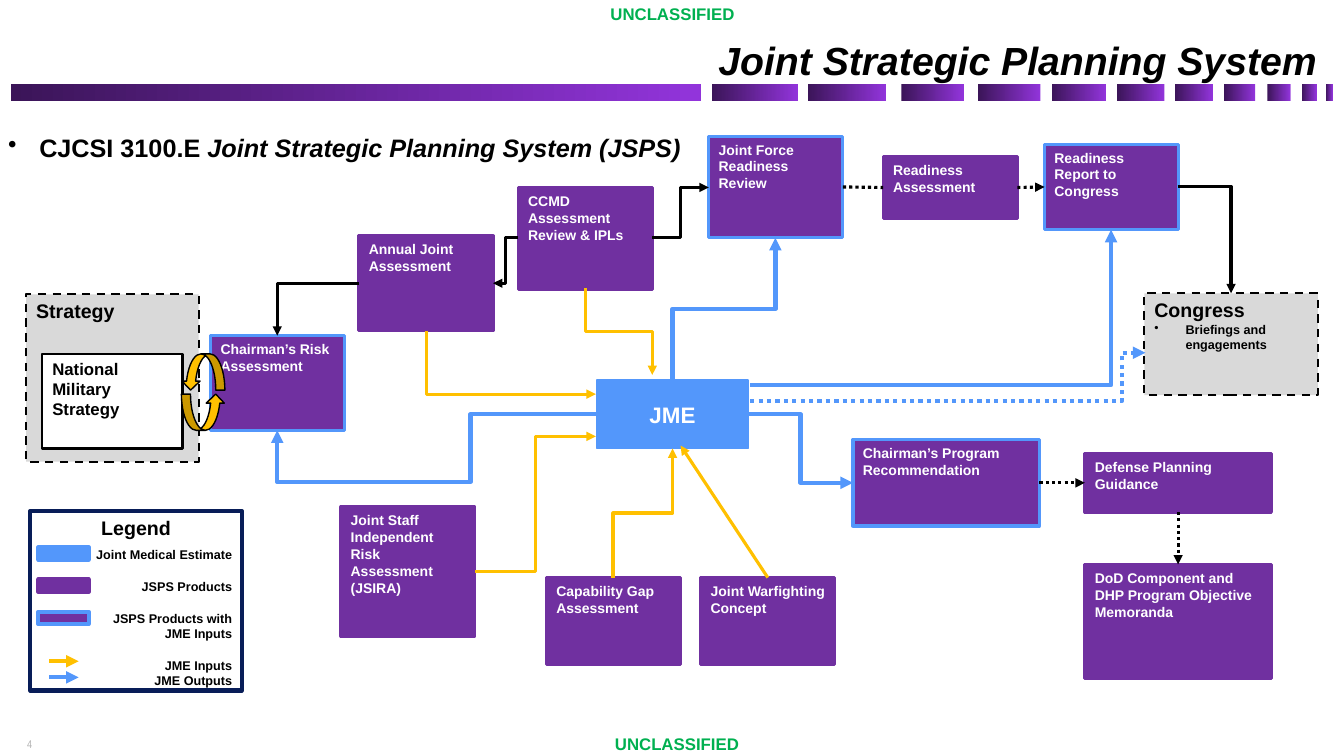
from pptx import Presentation
from pptx.dml.color import RGBColor
from pptx.enum.dml import MSO_LINE as Dash
from pptx.enum.shapes import MSO_CONNECTOR as Kind, MSO_SHAPE as Form
from pptx.enum.text import MSO_ANCHOR as Anchor, PP_ALIGN as Align
from pptx.oxml.ns import qn
from pptx.util import Inches, Pt
from lxml.etree import SubElement

rgb = RGBColor.from_string
BLACK, WHITE, GREEN, GRAY = "000000", "FFFFFF", "00B050", "D9D9D9"
PURPLE, BLUE, GOLD, NAVY = "7030A0", "5397FB", "FFC000", "081D58"

deck = Presentation()
deck.slide_width, deck.slide_height = Inches(13.33), Inches(7.5)
slide = deck.slides.add_slide(deck.slide_layouts[6])
shapes = slide.shapes


def write(shape, text, size=10, color=WHITE, bold=True, italic=False, font="Arial",
          align=Align.LEFT, anchor=Anchor.TOP, inset=None, before=0, bullet=0, more=False):
    """Write one paragraph per line of text; more=True adds to the text already there."""
    frame = shape.text_frame
    frame.word_wrap, frame.vertical_anchor = True, anchor
    if inset is not None:
        frame.margin_left = frame.margin_right = Inches(inset)
        frame.margin_top = frame.margin_bottom = Inches(inset)
    for n, line in enumerate(text.split("\n")):
        para = frame.add_paragraph() if more or n else frame.paragraphs[0]
        para.alignment = align
        if before and n == 0:
            para.space_before = Pt(before)
        if bullet:
            props = para._p.get_or_add_pPr()
            props.set("marL", str(Inches(bullet)))
            props.set("indent", str(-Inches(bullet)))
            SubElement(props, qn("a:buChar")).set("char", "•")
        para.font.size, para.font.name = Pt(size), font
        para.font.bold, para.font.color.rgb = bold, rgb(color)
        for k, part in enumerate(line.split("|")):
            run = para.add_run()
            run.text = part
            run.font.size, run.font.name = Pt(size), font
            run.font.bold, run.font.italic = bold, italic or k == 1
            run.font.color.rgb = rgb(color)


def link(start, end, color, width=2.25, dash=None, bends=0, down=False, adjust=(), head=True):
    """Draw a connector with 0 to 3 bends; down=True makes it leave vertically."""
    (x1, y1), (x2, y2) = start, end
    if down:
        cx, cy = (x1 + x2) / 2, (y1 + y2) / 2
        x1, y1, x2, y2 = cx + y1 - cy, cy - x1 + cx, cx + y2 - cy, cy - x2 + cx
    con = shapes.add_connector(Kind.ELBOW if bends else Kind.STRAIGHT,
                               Inches(x1), Inches(y1), Inches(x2), Inches(y2))
    props = con.element.spPr
    if down:
        props.find(qn("a:xfrm")).set("rot", "5400000")
    if bends:
        geom = props.find(qn("a:prstGeom"))
        geom.set("prst", f"bentConnector{bends + 1}")
        for n, value in enumerate(adjust, 1):
            guide = SubElement(geom.find(qn("a:avLst")), qn("a:gd"))
            guide.set("name", f"adj{n}")
            guide.set("fmla", f"val {round(value * 100000)}")
    con.line.color.rgb, con.line.width = rgb(color), Pt(width)
    if dash:
        con.line.dash_style = dash
    if head:
        SubElement(con.get_or_add_ln(), qn("a:tailEnd")).set("type", "triangle")
    SubElement(props, qn("a:effectLst"))
    return con


# Header band
bars = [(0.11, 6.84), (7.06, 0.86), (8.01, 0.78), (8.94, 0.62), (9.7, 0.62), (10.43, 0.54),
        (11.08, 0.47), (11.65, 0.38), (12.14, 0.31), (12.57, 0.23), (12.91, 0.15), (13.15, 0.07)]
for left, wide in bars:
    bar = shapes.add_shape(Form.RECTANGLE, Inches(left), Inches(0.83), Inches(wide), Inches(0.17))
    bar.shadow.inherit = False
    bar.line.fill.background()
    bar.fill.gradient()
    bar.fill.gradient_angle = 0
    for stop, color in zip(bar.fill.gradient_stops, ("3B1558", "9234DB")):
        stop.color.rgb = rgb(color)

# Title, markings, page number and heading
labels = [
    ((5.71, -0.01, 1.92, 0.3), "UNCLASSIFIED",
     dict(size=12, color=GREEN, align=Align.CENTER, inset=0.05)),
    ((5.96, 7.14, 1.42, 0.39), "UNCLASSIFIED",
     dict(size=12, color=GREEN, align=Align.RIGHT, anchor=Anchor.BOTTOM, inset=0.05)),
    ((0.22, 7.25, 4.44, 0.25), "4",
     dict(size=8, color="B2B2B2", bold=False, font="Arial Narrow", anchor=Anchor.BOTTOM, inset=0.05)),
    ((1.78, 0.17, 11.33, 0.71), "Joint Strategic Planning System",
     dict(size=28, color=BLACK, italic=True, align=Align.RIGHT, anchor=Anchor.BOTTOM, inset=0.05)),
    ((0.08, 1.31, 7.02, 0.4), "CJCSI 3100.E |Joint Strategic Planning System (JSPS)",
     dict(size=18, color=BLACK, inset=0, bullet=0.31)),
]
for place, text, form in labels:
    write(shapes.add_textbox(*map(Inches, place)), text, **form)

# Boxes: name, place, fill, line, line width, text, format
dark = dict(size=14, color=BLACK)
boxes = [
    ("jme", (5.92, 3.77, 1.5, 0.68), BLUE, BLUE, 1, "JME",
     dict(size=16, align=Align.CENTER, anchor=Anchor.MIDDLE)),
    ("congress", (11.35, 2.91, 1.72, 1.01), GRAY, BLACK, 1.5, "Congress", dark),
    ("strategy", (0.26, 2.92, 1.71, 1.66), GRAY, BLACK, 1.5, "Strategy", dark),
    ("nms", (0.42, 3.51, 1.39, 0.94), WHITE, BLACK, 1.5, "National\nMilitary\nStrategy",
     dict(size=12, color=BLACK)),
    ("risk", (2.09, 3.33, 1.33, 0.94), PURPLE, BLUE, 2.25, "Chairman’s Risk Assessment", {}),
    ("review", (7.03, 1.35, 1.33, 1.01), PURPLE, BLUE, 2.25, "Joint Force Readiness Review", {}),
    ("ready", (8.76, 1.55, 1.33, 0.62), PURPLE, PURPLE, 2.25, "Readiness Assessment", {}),
    ("report", (10.36, 1.43, 1.33, 0.85), PURPLE, BLUE, 2.25, "Readiness Report to Congress", {}),
    ("program", (8.46, 4.36, 1.85, 0.86), PURPLE, BLUE, 2.25, "Chairman’s Program Recommendation", {}),
    ("guide", (10.76, 4.5, 1.85, 0.58), PURPLE, PURPLE, 2.25, "Defense Planning Guidance", {}),
    ("memo", (10.76, 5.6, 1.85, 1.13), PURPLE, PURPLE, 2.25,
     "DoD Component and DHP Program Objective Memoranda", {}),
    ("concept", (6.95, 5.73, 1.33, 0.86), PURPLE, PURPLE, 2.25, "Joint Warfighting Concept", {}),
    ("gap", (5.42, 5.73, 1.33, 0.86), PURPLE, PURPLE, 2.25, "Capability Gap Assessment", {}),
    ("jsira", (3.38, 5.03, 1.33, 1.28), PURPLE, PURPLE, 2.25,
     "Joint Staff Independent Risk Assessment\n(JSIRA)", {}),
    ("annual", (3.56, 2.34, 1.33, 0.94), PURPLE, PURPLE, 2.25, "Annual Joint Assessment", {}),
    ("ccmd", (5.14, 1.86, 1.33, 1.01), PURPLE, PURPLE, 2.25, "CCMD Assessment Review & IPLs", {}),
    ("legend", (0.3, 5.07, 2.1, 1.78), WHITE, NAVY, 3, "Legend", dict(dark, align=Align.CENTER)),
    ("estimate", (0.38, 5.43, 0.5, 0.12), BLUE, BLUE, 3, "", {}),
    ("product", (0.38, 5.75, 0.5, 0.12), PURPLE, PURPLE, 3, "", {}),
    ("mixed", (0.38, 6.07, 0.5, 0.12), PURPLE, BLUE, 3, "", {}),
]
box = {}
for name, place, fill, edge, width, text, form in boxes:
    rect = box[name] = shapes.add_shape(Form.RECTANGLE, *map(Inches, place))
    rect.shadow.inherit = False
    rect.fill.solid()
    rect.fill.fore_color.rgb = rgb(fill)
    rect.line.color.rgb, rect.line.width = rgb(edge), Pt(width)
    if fill == GRAY:
        rect.line.dash_style = Dash.DASH
    if text:
        write(rect, text, **form)

write(box["congress"], "Briefings and engagements", size=9, color=BLACK, bullet=0.31, more=True)
keys = [("Joint Medical Estimate", 5), ("JSPS Products", 12),
        ("JSPS Products with\nJME Inputs", 12), ("JME Inputs\nJME Outputs", 12)]
for text, gap in keys:
    write(box["legend"], text, size=9, color=BLACK, align=Align.RIGHT, before=gap, more=True)
for y, color in ((6.56, GOLD), (6.72, BLUE)):
    link((0.49, y), (0.78, y), color, 3)

# Cycle between strategy and risk assessment
for top, turn in ((3.91, 0), (3.51, 180)):
    arc = shapes.add_shape(Form.CURVED_UP_ARROW, Inches(1.8), Inches(top), Inches(0.43), Inches(0.36))
    arc.shadow.inherit = False
    arc.rotation = turn
    arc.fill.solid()
    arc.fill.fore_color.rgb = rgb(GOLD)
    arc.line.color.rgb, arc.line.width = rgb(BLACK), Pt(1)

# Estimate outputs
link((5.92, 4.11), (2.75, 4.27), BLUE, 3, bends=3, adjust=(0.395, 4.2))
link((6.67, 3.77), (7.69, 2.36), BLUE, 3, bends=2, down=True)
link((7.44, 3.82), (11.02, 2.28), BLUE, 3, bends=1)
link((7.42, 4.11), (8.46, 4.79), BLUE, 3, bends=2)
link((7.44, 3.98), (11.36, 3.5), BLUE, 3, Dash.ROUND_DOT, bends=2, adjust=(0.94,))

# Flow between products
link((3.56, 2.81), (2.75, 3.33), BLACK, bends=1)
link((5.14, 2.36), (4.89, 2.81), BLACK, bends=2)
link((6.47, 2.36), (7.03, 1.86), BLACK, bends=2)
link((11.68, 1.85), (12.21, 2.91), BLACK, bends=1)
steps = [("review", 3, (8.36, 1.86), "ready", 1, (8.76, 1.86), False),
         ("ready", 3, (10.09, 1.86), "report", 1, (10.36, 1.86), True),
         ("program", 3, (10.31, 4.79), "guide", 1, (10.76, 4.79), True),
         ("guide", 2, (11.68, 5.08), "memo", 0, (11.68, 5.6), True)]
for first, out, start, last, into, end, head in steps:
    step = link(start, end, BLACK, dash=Dash.ROUND_DOT, head=head)
    step.begin_connect(box[first], out)
    step.end_connect(box[last], into)

# Estimate inputs
link((7.61, 5.73), (6.75, 4.42), GOLD).begin_connect(box["concept"], 0)
link((6.08, 5.73), (6.67, 4.45), GOLD, bends=2, down=True)
link((4.71, 5.67), (5.91, 4.33), GOLD, bends=2)
link((4.23, 3.28), (5.91, 3.91), GOLD, bends=1, down=True)
link((5.81, 2.86), (6.47, 3.72), GOLD, bends=2, down=True)

deck.save("out.pptx")
